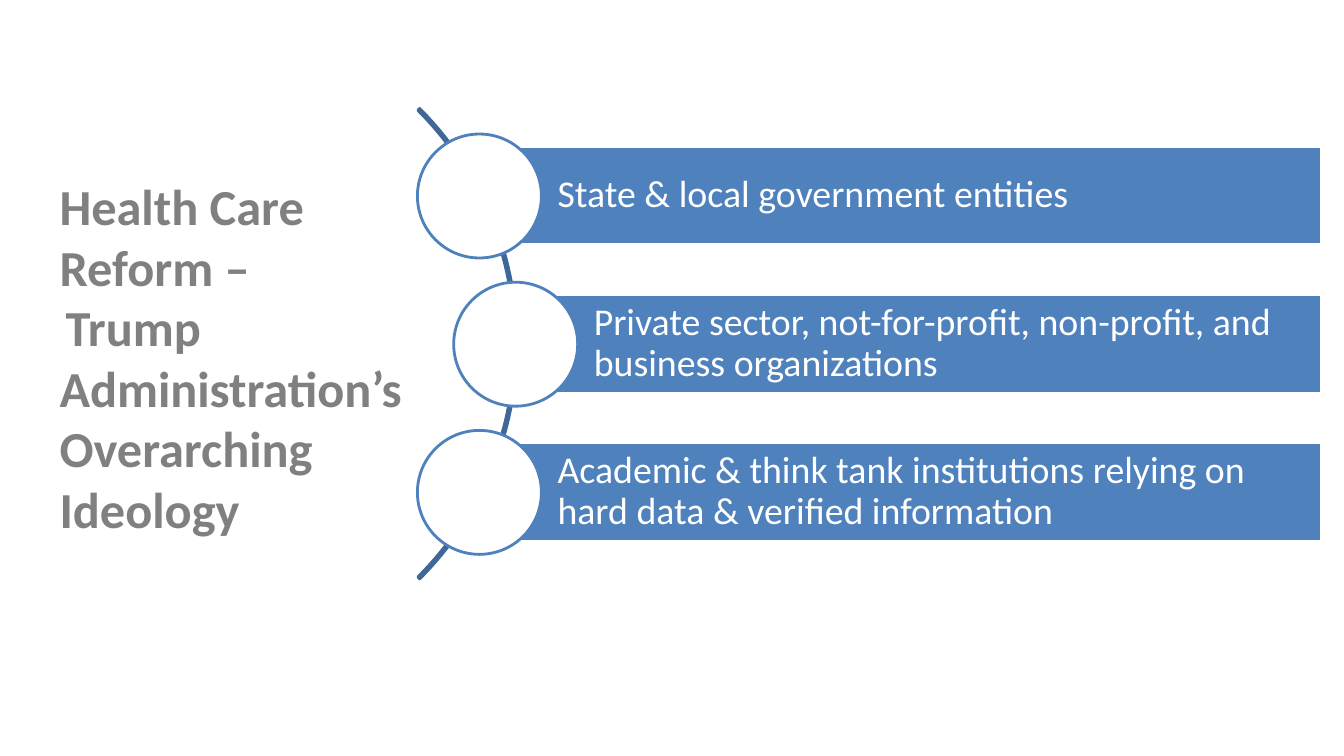
from pptx import Presentation
from pptx import util as u
from pptx.dml.color import RGBColor
from pptx.enum import shapes, text

PX = 9144  # 100 px to the inch
COLORS = {
    "white": "FFFFFF",
    "blue": "4F81BD",
    "arc": "3F6797",
    "title": "808080",
}
TITLE_LINES = [
    (0, "Health Care"),
    (0, "Reform –"),
    (6, "Trump"),
    (0, "Administration’s"),
    (0, "Overarching"),
    (0, "Ideology"),
]
ENTITIES = [
    (475, "State & local government entities"),
    (511, "Private sector, not-for-profit, non-profit, and business organizations"),
    (475, "Academic & think tank institutions relying on hard data & verified information"),
]
FIRST_CENTER, PITCH = 194, 147
BAR_HEIGHT, BAR_RIGHT, CIRCLE = 98, 1311, 123


def px(*lengths):
    return [u.Emu(length * PX) for length in lengths]


def color(name):
    return RGBColor.from_string(COLORS[name])


def style(paragraph, size, color_name, bold=False):
    paragraph.alignment = text.PP_ALIGN.LEFT
    for run in paragraph.runs:
        run.font.name = "Calibri"
        run.font.size = u.Pt(size)
        run.font.bold = bold
        run.font.color.rgb = color(color_name)


def add_outlined(slide, kind, box, line, fill=None):
    shape = slide.shapes.add_shape(kind, *px(*box))
    shape.shadow.inherit = False
    if fill:
        shape.fill.solid()
        shape.fill.fore_color.rgb = color(fill)
    else:
        shape.fill.background()
    shape.line.color.rgb = color(line)
    shape.line.width = u.Pt(2)
    return shape


def fill_title(title):
    title.left, title.top, title.width, title.height = px(49, 169, 1119, 374)
    frame = title.text_frame
    frame.text = "\n".join(words for _, words in TITLE_LINES)
    frame.word_wrap = True
    frame.auto_size = text.MSO_AUTO_SIZE.NONE
    frame.vertical_anchor = text.MSO_ANCHOR.TOP
    for paragraph, (indent, _) in zip(frame.paragraphs, TITLE_LINES):
        properties = paragraph._p.get_or_add_pPr()
        properties.set("marL", str(indent * PX))
        properties.set("indent", "0")
        style(paragraph, 36, "title", bold=True)


def add_arc(slide):
    arc = add_outlined(slide, shapes.MSO_SHAPE.BLOCK_ARC, (-147, 11, 660, 660), "arc")
    for index, value in enumerate((189, 27, 0.004)):
        arc.adjustments[index] = value


def add_entity(slide, center_x, center_y, words):
    """Add a bar with its text and the circle over the bar's left end."""
    bar = add_outlined(
        slide, shapes.MSO_SHAPE.RECTANGLE,
        (center_x, center_y - BAR_HEIGHT // 2, BAR_RIGHT - center_x, BAR_HEIGHT),
        "white", "blue")
    frame = bar.text_frame
    frame.word_wrap = True
    frame.vertical_anchor = text.MSO_ANCHOR.MIDDLE
    (frame.margin_left, frame.margin_top,
     frame.margin_right, frame.margin_bottom) = px(78, 7, 7, 7)
    frame.text = words
    paragraph = frame.paragraphs[0]
    paragraph.line_spacing = 0.9
    style(paragraph, 27, "white")
    add_outlined(
        slide, shapes.MSO_SHAPE.OVAL,
        (center_x - CIRCLE // 2, center_y - CIRCLE // 2, CIRCLE, CIRCLE),
        "blue", "white")


def main():
    presentation = Presentation()
    presentation.slide_width, presentation.slide_height = px(1333, 750)
    slide = presentation.slides.add_slide(presentation.slide_layouts[5])
    fill_title(slide.shapes.title)
    add_arc(slide)
    for row, (center_x, words) in enumerate(ENTITIES):
        add_entity(slide, center_x, FIRST_CENTER + row * PITCH, words)
    presentation.save("out.pptx")


if __name__ == "__main__":
    main()
